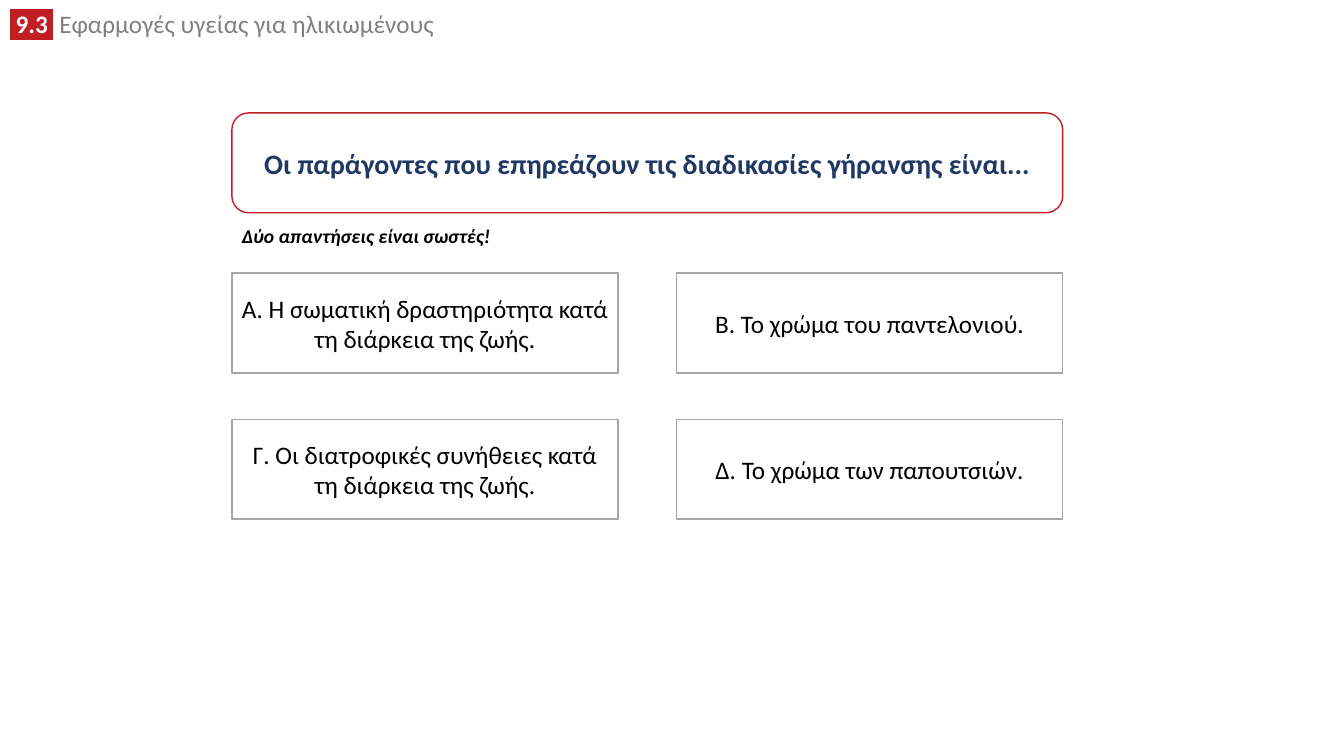
from lxml.etree import SubElement
from pptx import Presentation
from pptx.dml.color import RGBColor
from pptx.enum.shapes import MSO_SHAPE
from pptx.enum.text import MSO_ANCHOR, MSO_AUTO_SIZE, PP_ALIGN
from pptx.oxml.ns import qn
from pptx.util import Inches, Pt

RED = RGBColor(0xC0, 0x1E, 0x24)
NAVY = RGBColor(0x20, 0x38, 0x64)
GREY = RGBColor(0x80, 0x80, 0x80)
BORDER = RGBColor(0xA5, 0xA5, 0xA5)
WHITE = RGBColor(0xFF, 0xFF, 0xFF)
BLACK = RGBColor(0, 0, 0)

LEFT, BOX_HEIGHT = 2.3, 0.99
ANSWER_TOP, ANSWER_WIDTH = 2.71, 3.83
COLUMN_STEP, ROW_STEP = 4.41, 1.45
QUESTION_WIDTH = COLUMN_STEP + ANSWER_WIDTH

QUESTION = "Οι παράγοντες που επηρεάζουν τις διαδικασίες γήρανσης είναι..."
ANSWERS = [
    "A. Η σωματική δραστηριότητα κατά τη διάρκεια της ζωής.",
    "B. Το χρώμα του παντελονιού.",
    "Γ. Οι διατροφικές συνήθειες κατά τη διάρκεια της ζωής.",
    "Δ. Το χρώμα των παπουτσιών.",
]


def add_run(paragraph, text, size=18, color=BLACK, bold=False, italic=False, highlight=None):
    run = paragraph.add_run()
    run.text = text
    font = run.font
    font.name, font.size, font.bold, font.italic = "Calibri", Pt(size), bold, italic
    font.color.rgb = color
    if highlight is not None:
        properties = run._r.get_or_add_rPr()
        mark = SubElement(properties, qn("a:highlight"))
        SubElement(mark, qn("a:srgbClr"), val=str(highlight))
        properties.find(qn("a:solidFill")).addnext(mark)


def add_label(slide, left, top, width, height, wrap=True):
    """Add an empty text box and return its first paragraph."""
    box = slide.shapes.add_textbox(Inches(left), Inches(top), Inches(width), Inches(height))
    box.text_frame.word_wrap = wrap
    box.text_frame.auto_size = MSO_AUTO_SIZE.SHAPE_TO_FIT_TEXT
    return box.text_frame.paragraphs[0]


def add_framed_text(slide, kind, left, top, width, text, line_color, **text_format):
    shape = slide.shapes.add_shape(
        kind, Inches(left), Inches(top), Inches(width), Inches(BOX_HEIGHT))
    shape.shadow.inherit = False
    shape.fill.solid()
    shape.fill.fore_color.rgb = WHITE
    shape.line.color.rgb = line_color
    shape.line.width = Pt(1)
    frame = shape.text_frame
    frame.word_wrap = True
    frame.vertical_anchor = MSO_ANCHOR.MIDDLE
    frame.paragraphs[0].alignment = PP_ALIGN.CENTER
    add_run(frame.paragraphs[0], text, **text_format)


def main():
    presentation = Presentation()
    presentation.slide_width = Inches(13.33)
    presentation.slide_height = Inches(7.5)
    slide = presentation.slides.add_slide(presentation.slide_layouts[6])

    heading = add_label(slide, 0, 0.09, 9.52, 0.35)
    heading.line_spacing = 0.8
    add_run(heading, " 9.3 ", color=WHITE, bold=True, highlight=RED)
    add_run(heading, " Εφαρμογές υγείας για ηλικιωμένους", color=GREY)

    add_framed_text(slide, MSO_SHAPE.ROUNDED_RECTANGLE, LEFT, 1.12, QUESTION_WIDTH,
                    QUESTION, RED, size=20, color=NAVY, bold=True)
    hint = add_label(slide, LEFT, 2.17, 2.68, 0.34, wrap=False)
    add_run(hint, "Δύο απαντήσεις είναι σωστές!", size=14, bold=True, italic=True)

    for index, answer in enumerate(ANSWERS):
        row, column = divmod(index, 2)
        add_framed_text(slide, MSO_SHAPE.RECTANGLE, LEFT + column * COLUMN_STEP,
                        ANSWER_TOP + row * ROW_STEP, ANSWER_WIDTH, answer, BORDER)

    presentation.save("out.pptx")


if __name__ == "__main__":
    main()
